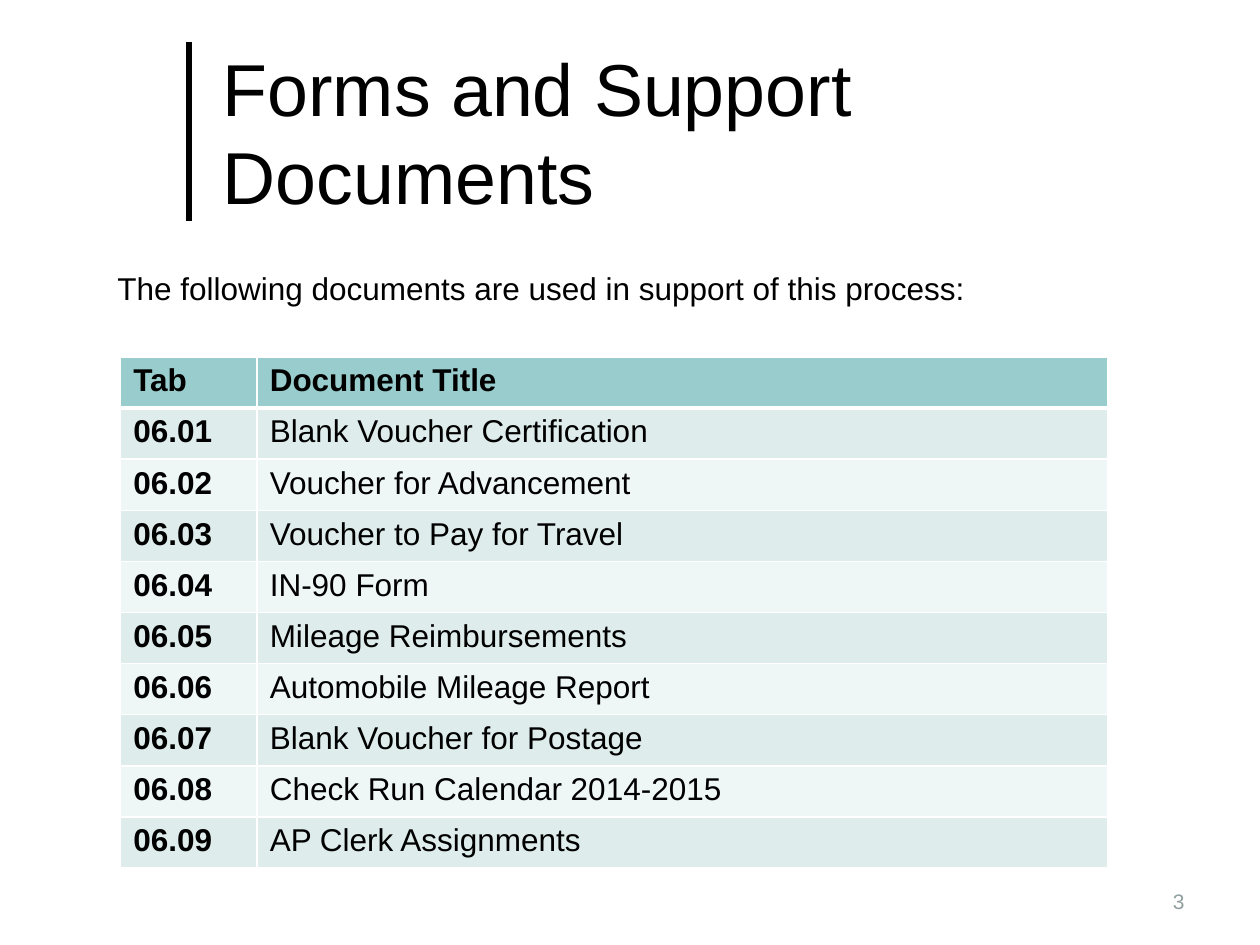
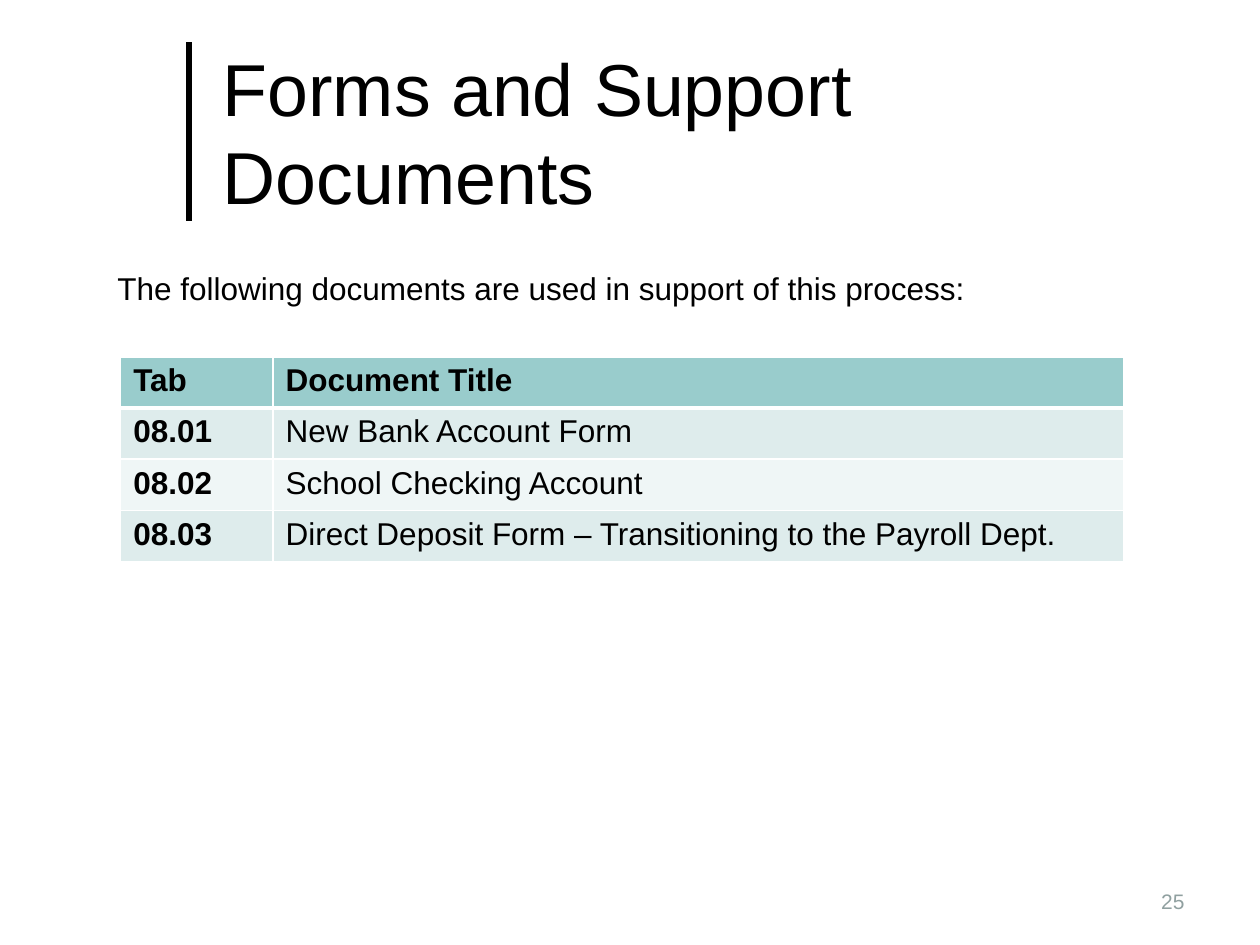
from lxml.etree import SubElement
from pptx import Presentation
from pptx.dml.color import RGBColor
from pptx.enum.shapes import MSO_CONNECTOR
from pptx.enum.text import MSO_ANCHOR, MSO_AUTO_SIZE, PP_ALIGN
from pptx.oxml.ns import qn
from pptx.util import Pt

TITLE = "Forms and Support Documents"
INTRODUCTION = "The following documents are used in support of this process:"
HEADINGS = ("Tab", "Document Title")

# page number, section, width of the tab column, document titles
DOCUMENT_LISTS = [
    (3, "06", 78, [
        "Blank Voucher Certification",
        "Voucher for Advancement",
        "Voucher to Pay for Travel",
        "IN-90 Form",
        "Mileage Reimbursements",
        "Automobile Mileage Report",
        "Blank Voucher for Postage",
        "Check Run Calendar 2014-2015",
        "AP Clerk Assignments",
    ]),
    (25, "08", 87, [
        "New Bank Account Form",
        "School Checking Account",
        "Direct Deposit Form – Transitioning to the Payroll Dept.",
    ]),
]


def color(hex_string):
    return RGBColor.from_string(hex_string)


class Deck:
    FONT = "Arial"
    BLACK, WHITE, GREY = "000000", "FFFFFF", "90A0A0"
    HEADER_FILL = "99CCCC"
    BAND_FILLS = ("DEECEC", "EFF6F6")
    BODY_SIZE = 18
    TITLE_COLUMN_WIDTH = 486
    ROW_HEIGHT = 29.2

    def __init__(self):
        self.presentation = Presentation()
        self.presentation.slide_width = Pt(720)
        self.presentation.slide_height = Pt(540)
        self.slide = None

    def add_slide(self, title):
        layout = self.presentation.slide_layouts.get_by_name("Title Only")
        self.slide = self.presentation.slides.add_slide(layout)
        self.add_rule(108, 24, 126)
        shape = self.slide.shapes.title
        shape.left, shape.top, shape.width, shape.height = Pt(120), Pt(15), Pt(552), Pt(120)
        self.fill_frame(shape.text_frame, title, 42, anchor=MSO_ANCHOR.MIDDLE)

    def format_text(self, text_frame, text, size, ink=BLACK, bold=False):
        text_frame.text = text
        font = text_frame.paragraphs[0].runs[0].font
        font.name, font.size, font.bold = self.FONT, Pt(size), bold
        font.color.rgb = color(ink)

    def fill_frame(self, text_frame, text, size, ink=BLACK,
                   align=PP_ALIGN.LEFT, anchor=MSO_ANCHOR.TOP):
        self.format_text(text_frame, text, size, ink)
        text_frame.word_wrap = True
        text_frame.auto_size = MSO_AUTO_SIZE.NONE
        text_frame.vertical_anchor = anchor
        text_frame.paragraphs[0].alignment = align

    def add_rule(self, left, top, bottom):
        rule = self.slide.shapes.add_connector(
            MSO_CONNECTOR.STRAIGHT, Pt(left), Pt(bottom), Pt(left), Pt(top))
        rule.line.color.rgb = color(self.BLACK)
        rule.line.width = Pt(3)
        SubElement(rule._element.spPr, qn("a:effectLst"))

    def add_text(self, text, left, top, width, height, size, **style):
        shape = self.slide.shapes.add_textbox(Pt(left), Pt(top), Pt(width), Pt(height))
        self.fill_frame(shape.text_frame, text, size, **style)

    def add_page_number(self, number):
        self.add_text(str(number), 516, 500.5, 168, 28.5, 12, ink=self.GREY,
                      align=PP_ALIGN.RIGHT, anchor=MSO_ANCHOR.MIDDLE)

    def add_table(self, rows, left, top, tab_width):
        """Draw a banded table whose header row and first column are bold."""
        widths = (tab_width, self.TITLE_COLUMN_WIDTH)
        table = self.slide.shapes.add_table(
            len(rows), len(widths), Pt(left), Pt(top),
            Pt(sum(widths)), Pt(self.ROW_HEIGHT * len(rows))).table
        for column, width in zip(table.columns, widths):
            column.width = Pt(width)
        for row_index, texts in enumerate(rows):
            table.rows[row_index].height = Pt(self.ROW_HEIGHT)
            is_header = row_index == 0
            fill = self.HEADER_FILL if is_header else self.BAND_FILLS[(row_index - 1) % 2]
            for column_index, text in enumerate(texts):
                cell = table.cell(row_index, column_index)
                self.format_text(cell.text_frame, text, self.BODY_SIZE,
                                 bold=is_header or column_index == 0)
                self.add_borders(cell, top=3 if row_index == 1 else 1,
                                 bottom=3 if is_header else 1)
                cell.fill.solid()
                cell.fill.fore_color.rgb = color(fill)

    def add_borders(self, cell, top, bottom):
        properties = cell._tc.get_or_add_tcPr()
        for side, width in (("L", 1), ("R", 1), ("T", top), ("B", bottom)):
            border = SubElement(properties, qn(f"a:ln{side}"), w=str(Pt(width)))
            fill = SubElement(border, qn("a:solidFill"))
            SubElement(fill, qn("a:srgbClr"), val=self.WHITE)


def main():
    deck = Deck()
    for page, section, tab_width, documents in DOCUMENT_LISTS:
        deck.add_slide(TITLE)
        rows = [HEADINGS] + [(f"{section}.{number:02}", document)
                             for number, document in enumerate(documents, 1)]
        deck.add_table(rows, 69, 204, tab_width)
        deck.add_text(INTRODUCTION, 60, 150, 522, 29, deck.BODY_SIZE)
        deck.add_page_number(page)
    deck.presentation.save("out.pptx")


if __name__ == "__main__":
    main()
